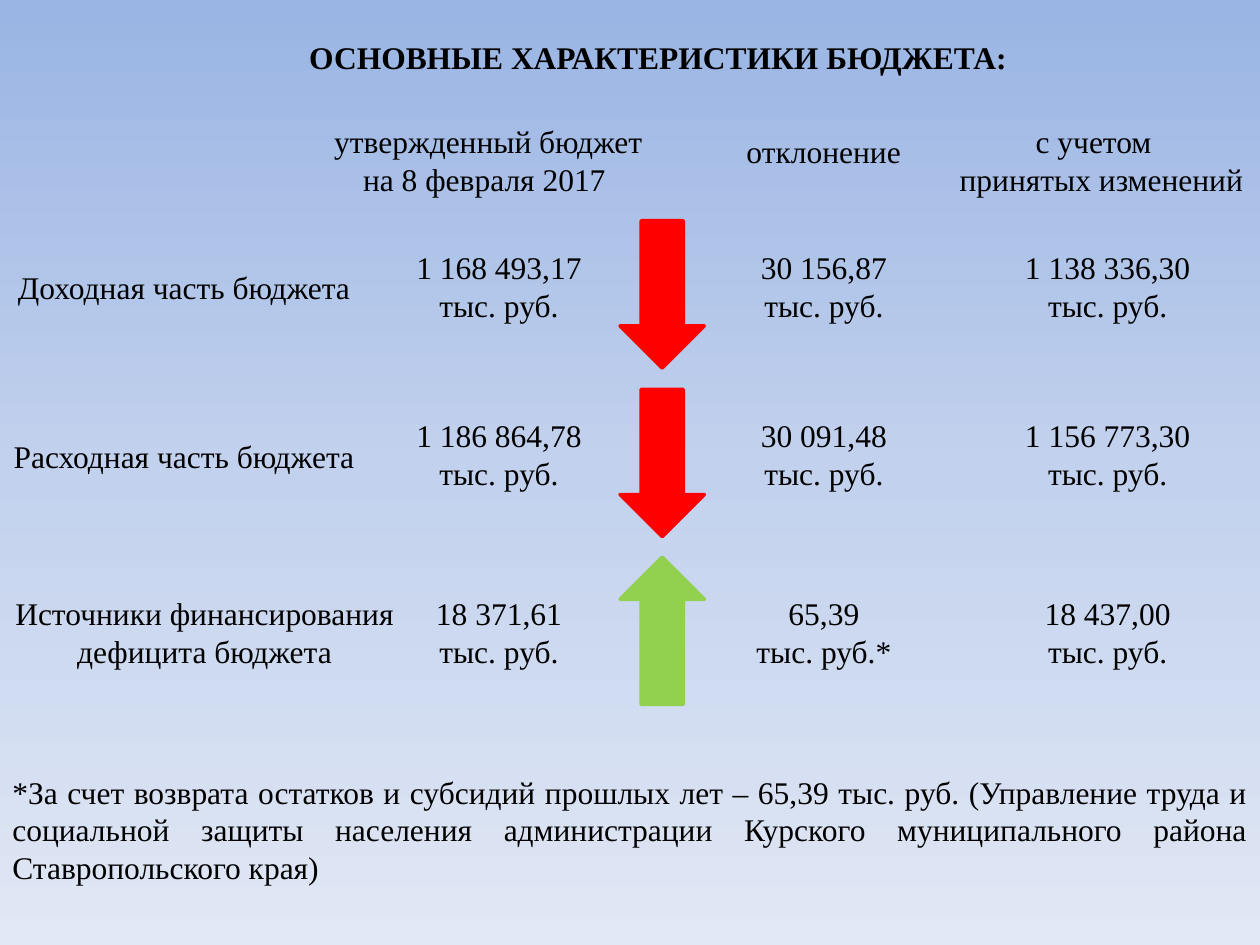
"""Build the slide with the main figures of the district budget."""
from copy import deepcopy
from dataclasses import dataclass

from pptx import Presentation
from pptx.dml.color import RGBColor
from pptx.enum.shapes import MSO_SHAPE
from pptx.enum.text import MSO_AUTO_SIZE, PP_ALIGN
from pptx.oxml.ns import qn
from pptx.slide import Slide
from pptx.util import Cm, Pt

DOWN_ARROW = MSO_SHAPE.DOWN_ARROW
GROW = MSO_AUTO_SIZE.SHAPE_TO_FIT_TEXT
CENTER, JUSTIFY = PP_ALIGN.CENTER, PP_ALIGN.JUSTIFY

FONT = "Times New Roman"
COLORS = {
    "sky_top": "9AB5E4",
    "sky_middle": "C2D1ED",
    "sky_bottom": "E1E8F5",
    "text": "000000",
    "decrease": "FF0000",
    "increase": "92D050",
}
ONE_LINE, TWO_LINES, THREE_LINES = 1.02, 1.8, 2.57
PLANNED_X, DEVIATION_X, REVISED_X = 10.06, 16.61, 22.33
DEVIATION_WIDTH = 3.61
ARROW_LEFT, ARROW_WIDTH, ARROW_HEIGHT = 12.5, 1.7, 2.97


@dataclass
class TextItem:
    text: str
    left: float
    top: float
    width: float
    height: float


@dataclass
class BudgetRow:
    label: TextItem
    planned: str
    deviation: str
    revised: str
    top: float
    arrow_top: float
    amount_width: float = 4.01
    unit_mark: str = ""
    rising: bool = False


HEADERS = [
    TextItem("утвержденный бюджет на 8 февраля 2017 ", 6.35, 2.33, 6.99, TWO_LINES),
    TextItem("отклонение", 14.6, 2.54, 4.01, ONE_LINE),
    TextItem("с учетом \n принятых изменений", 18.85, 2.33, 6.55, TWO_LINES),
]
ROWS = [
    BudgetRow(TextItem("Доходная часть бюджета", 0, 5.28, 7.42, ONE_LINE),
              "1 168 493,17", "30 156,87", "1 138 336,30", 4.88, 4.45),
    BudgetRow(TextItem("Расходная часть бюджета", 0, 8.68, 7.42, ONE_LINE),
              "1 186 864,78", "30 091,48", "1 156 773,30", 8.26, 7.85),
    BudgetRow(TextItem("Источники финансирования дефицита бюджета", 0, 11.86, 8.25, TWO_LINES),
              "18 371,61", "65,39", "18 437,00", 11.86, 11.23,
              amount_width=3.18, unit_mark="*", rising=True),
]
TITLE = TextItem("ОСНОВНЫЕ ХАРАКТЕРИСТИКИ БЮДЖЕТА:", 5.92, 0.64, 14.7, ONE_LINE)
FOOTNOTE = TextItem(
    "*За счет возврата остатков и субсидий прошлых лет – 65,39 тыс. руб. "
    "(Управление труда и социальной защиты населения администрации "
    "Курского муниципального района Ставропольского края)",
    0, 15.45, 25.4, THREE_LINES)


def rgb(name: str) -> RGBColor:
    """Return the named colour."""
    return RGBColor.from_string(COLORS[name])


def add_text(s: Slide, item: TextItem, *, align: PP_ALIGN = CENTER,
             bold: bool = False, wrap: bool = True) -> None:
    """Add a text box with one paragraph per line of text."""
    tf = s.shapes.add_textbox(Cm(item.left), Cm(item.top),
                              Cm(item.width), Cm(item.height)).text_frame
    tf.word_wrap = wrap
    tf.auto_size = GROW
    tf.text = item.text
    for p in tf.paragraphs:
        p.alignment = align
        for r in p.runs:
            r.font.name, r.font.size, r.font.bold = FONT, Pt(18), bold
            r.font.color.rgb = rgb("text")


def add_amount(s: Slide, amount: str, center: float, top: float,
               width: float, mark: str = "") -> None:
    """Add an amount with its unit, centred on a column."""
    add_text(s, TextItem(f"{amount}\nтыс. руб.{mark}", center - width / 2, top,
                         width, TWO_LINES))


def add_arrow(s: Slide, top: float, rising: bool) -> None:
    """Add an arrow that shows the direction of the change."""
    sp = s.shapes.add_shape(DOWN_ARROW, Cm(ARROW_LEFT), Cm(top),
                            Cm(ARROW_WIDTH), Cm(ARROW_HEIGHT))
    color = rgb("increase" if rising else "decrease")
    sp.rotation = 180 if rising else 0
    sp.shadow.inherit = False
    sp.fill.solid()
    sp.fill.fore_color.rgb = color
    sp.line.color.rgb = color
    sp.line.width = Pt(2)


def add_row(s: Slide, row: BudgetRow) -> None:
    """Add one budget row with its label, amounts and arrow."""
    add_text(s, row.label)
    add_amount(s, row.planned, PLANNED_X, row.top, row.amount_width)
    add_arrow(s, row.arrow_top, row.rising)
    add_amount(s, row.deviation, DEVIATION_X, row.top, DEVIATION_WIDTH, row.unit_mark)
    add_amount(s, row.revised, REVISED_X, row.top, row.amount_width)


def paint_background(s: Slide) -> None:
    """Fill the background with a vertical gradient of three colours."""
    fill = s.background.fill
    fill.gradient()
    fill.gradient_angle = 270
    stops = s.element.find(".//" + qn("a:gsLst"))
    stops.insert(1, deepcopy(stops[0]))
    names = ("sky_top", "sky_middle", "sky_bottom")
    for i, (stop, name) in enumerate(zip(fill.gradient_stops, names)):
        stop.position = i / 2
        stop.color.rgb = rgb(name)


def main() -> None:
    """Build and save the presentation."""
    prs = Presentation()
    prs.slide_width, prs.slide_height = Cm(25.4), Cm(19.05)
    s = prs.slides.add_slide(prs.slide_layouts[6])
    paint_background(s)
    add_text(s, TITLE, bold=True, wrap=False)
    for header in HEADERS:
        add_text(s, header)
    for row in ROWS:
        add_row(s, row)
    add_text(s, FOOTNOTE, align=JUSTIFY)
    prs.save("out.pptx")


if __name__ == "__main__":
    main()
